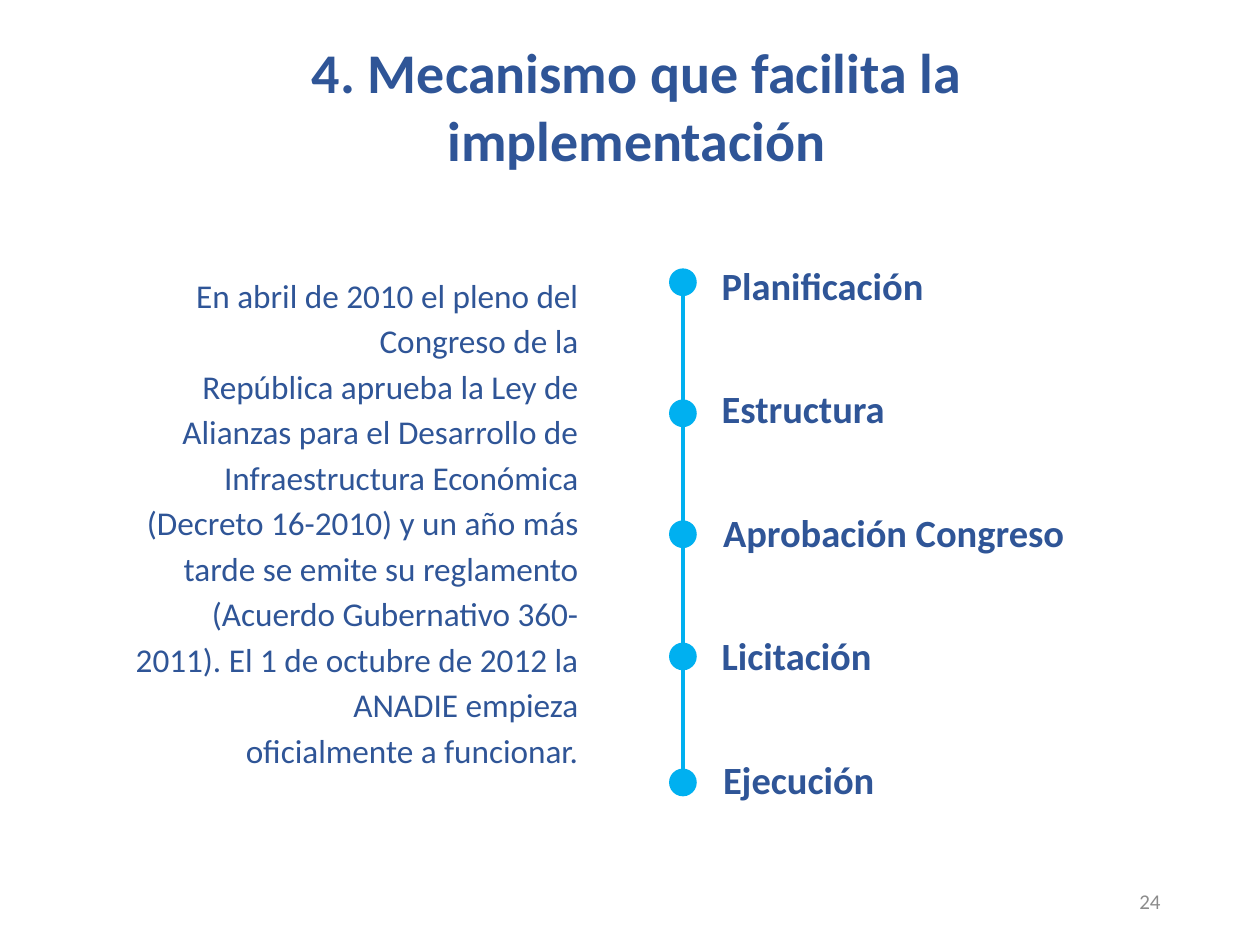
from dataclasses import dataclass

from lxml.etree import SubElement
from pptx import Presentation
from pptx.dml.color import RGBColor
from pptx.enum.shapes import MSO_CONNECTOR, MSO_SHAPE
from pptx.enum.text import MSO_ANCHOR, MSO_AUTO_SIZE, PP_ALIGN
from pptx.oxml.ns import qn
from pptx.shapes.base import BaseShape
from pptx.slide import Slide
from pptx.text.text import _Paragraph as Paragraph
from pptx.util import Inches, Pt

NAVY = RGBColor(0x2F, 0x55, 0x97)
CYAN = RGBColor(0x00, 0xB0, 0xF0)
GRAY = RGBColor(0x8C, 0x8C, 0x8C)
FONT = "Calibri"
NBSP = chr(160)  # no-break space

AXIS_X = 5.42
DOT_SIZE = 0.22
LABELS_TOP = 2.03
LABEL_STEP = 0.98


@dataclass(frozen=True)
class Stage:
    name: str
    dot_top: float
    label_left: float = 5.63


STAGES = [
    Stage("Planificación", 2.13),
    Stage("Estructura", 3.17),
    Stage("Aprobación Congreso", 4.13, 5.64),
    Stage("Licitación", 5.10),
    Stage("Ejecución", 6.10, 5.64),
]

LAW_HISTORY = (
    f"En abril de 2010 el pleno del Congreso de la República{NBSP}aprueba la Ley de "
    "Alianzas para el Desarrollo de Infraestructura Económica (Decreto 16-2010) "
    f"y un año más tarde se emite{NBSP}su reglamento (Acuerdo Gubernativo 360-2011). "
    f"El 1 de octubre de 2012 la ANADIE empieza oficialmente{NBSP}a{NBSP}funcionar."
)


def place(shape: BaseShape, left: float, top: float, width: float, height: float) -> None:
    shape.left, shape.top = Inches(left), Inches(top)
    shape.width, shape.height = Inches(width), Inches(height)


def write(shape: BaseShape, text: str, size: float, color: RGBColor = NAVY,
          bold: bool = False, align: PP_ALIGN = PP_ALIGN.LEFT,
          anchor: MSO_ANCHOR = MSO_ANCHOR.TOP) -> Paragraph:
    frame = shape.text_frame
    frame.text = text
    frame.word_wrap = True
    frame.auto_size = MSO_AUTO_SIZE.NONE
    frame.vertical_anchor = anchor
    paragraph = frame.paragraphs[0]
    paragraph.alignment = align
    paragraph.space_before = Pt(0)
    font = paragraph.runs[0].font
    font.name, font.size, font.bold = FONT, Pt(size), bold
    font.color.rgb = color
    return paragraph


def add_label(slide: Slide, left: float, top: float, width: float, height: float,
              text: str, size: float, **style) -> None:
    box = slide.shapes.add_textbox(Inches(left), Inches(top), Inches(width), Inches(height))
    write(box, text, size, **style)


def add_axis(slide: Slide, top: float, bottom: float) -> None:
    axis = slide.shapes.add_connector(
        MSO_CONNECTOR.STRAIGHT, Inches(AXIS_X), Inches(bottom), Inches(AXIS_X), Inches(top))
    axis.line.color.rgb = CYAN
    axis.line.width = Pt(2.25)
    SubElement(axis._element.spPr, qn("a:effectLst"))


def add_dot(slide: Slide, top: float) -> None:
    dot = slide.shapes.add_shape(
        MSO_SHAPE.OVAL, Inches(AXIS_X - DOT_SIZE / 2), Inches(top),
        Inches(DOT_SIZE), Inches(DOT_SIZE))
    dot.shadow.inherit = False
    dot.fill.solid()
    dot.fill.fore_color.rgb = CYAN
    dot.line.fill.background()


def main() -> None:
    prs = Presentation()
    prs.slide_width, prs.slide_height = Inches(10), Inches(7.5)
    slide = prs.slides.add_slide(prs.slide_layouts[1])

    title = slide.shapes.title
    place(title, 1.75, 0.25, 6.61, 1.18)
    write(title, "4. Mecanismo que facilita la implementación", 32,
          bold=True, align=PP_ALIGN.CENTER)

    body = slide.placeholders[1]
    place(body, 0.94, 2.09, 3.75, 4.09)
    history = write(body, LAW_HISTORY, 19, align=PP_ALIGN.RIGHT)
    history.line_spacing = Pt(26)
    history.space_after = Pt(7.5)
    properties = history._p.get_or_add_pPr()
    properties.set("marL", "0")
    properties.set("indent", "0")
    SubElement(properties, qn("a:buNone"))

    radius = DOT_SIZE / 2
    add_axis(slide, STAGES[0].dot_top + radius, STAGES[-1].dot_top + radius)
    for row, stage in enumerate(STAGES):
        add_dot(slide, stage.dot_top)
        add_label(slide, stage.label_left, LABELS_TOP + row * LABEL_STEP, 3.9, 0.47,
                  stage.name, 22, bold=True)

    add_label(slide, 7.06, 6.95, 2.25, 0.4, "24", 12, color=GRAY,
              align=PP_ALIGN.RIGHT, anchor=MSO_ANCHOR.MIDDLE)

    prs.save("out.pptx")


if __name__ == "__main__":
    main()
